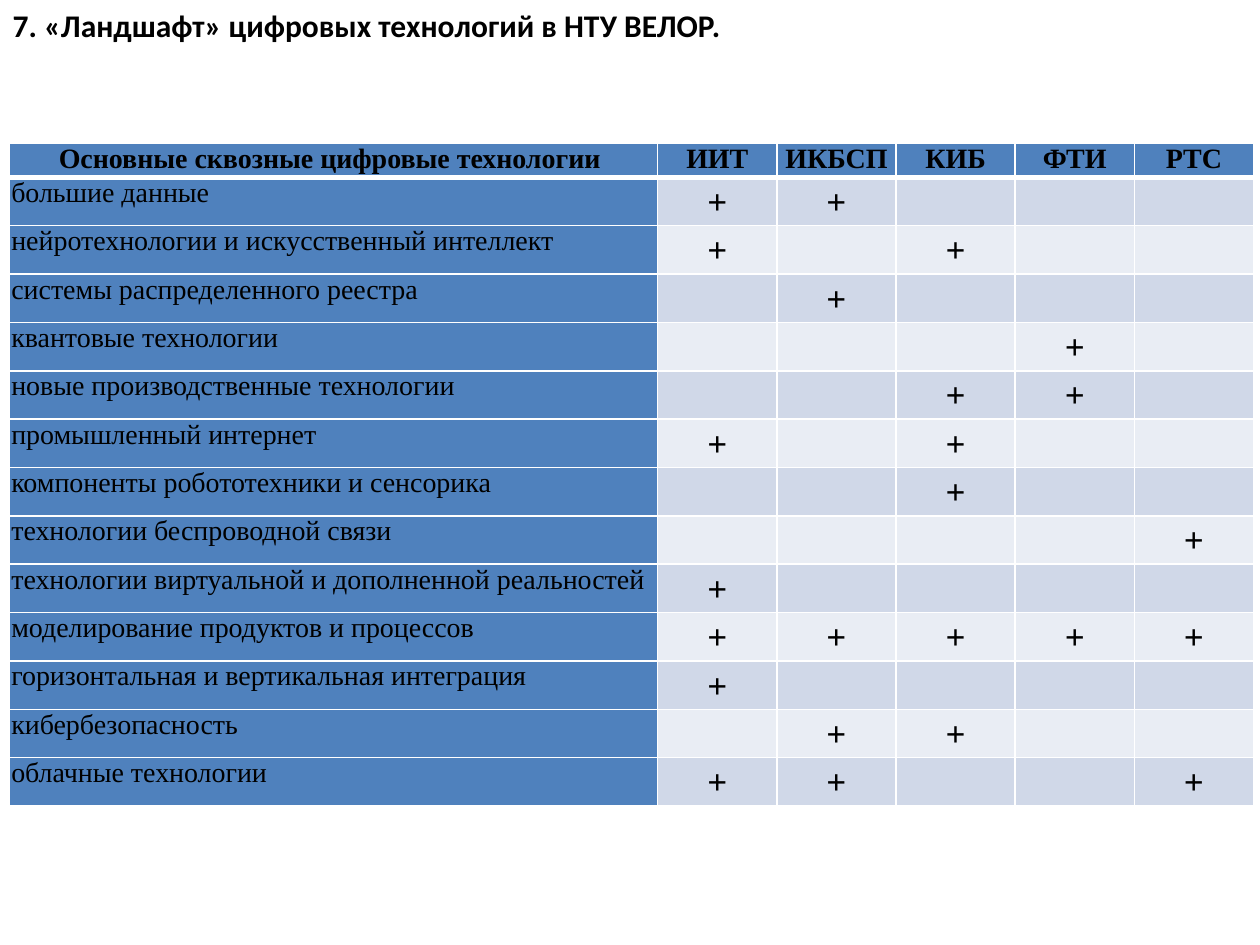
"""Build a slide with a table of digital technologies by institute."""
import pptx
import pptx.dml.color
import pptx.enum.text
import pptx.oxml.ns
import pptx.util
from lxml import etree

BLACK = pptx.dml.color.RGBColor(0x00, 0x00, 0x00)
WHITE = pptx.dml.color.RGBColor(0xFF, 0xFF, 0xFF)
BLUE = pptx.dml.color.RGBColor(0x4F, 0x81, 0xBD)
DARK_BAND = pptx.dml.color.RGBColor(0xD0, 0xD8, 0xE8)
LIGHT_BAND = pptx.dml.color.RGBColor(0xE9, 0xED, 0xF4)
Inches = pptx.util.Inches
ALIGN = pptx.enum.text.PP_ALIGN

INSTITUTES = ["ИИТ", "ИКБСП", "КИБ", "ФТИ", "РТС"]
TECHNOLOGIES = [
    ("большие данные", ["ИИТ", "ИКБСП"]),
    ("нейротехнологии и искусственный интеллект", ["ИИТ", "КИБ"]),
    ("системы распределенного реестра", ["ИКБСП"]),
    ("квантовые технологии", ["ФТИ"]),
    ("новые производственные технологии", ["КИБ", "ФТИ"]),
    ("промышленный интернет", ["ИИТ", "КИБ"]),
    ("компоненты робототехники и сенсорика", ["КИБ"]),
    ("технологии беспроводной связи", ["РТС"]),
    ("технологии виртуальной и дополненной реальностей", ["ИИТ"]),
    ("моделирование продуктов и процессов", INSTITUTES),
    ("горизонтальная и вертикальная интеграция", ["ИИТ"]),
    ("кибербезопасность", ["ИКБСП", "КИБ"]),
    ("облачные технологии", ["ИИТ", "ИКБСП", "РТС"]),
]
TABLE_WIDTH = 9.88
TABLE_HEIGHT = 5.25
NAME_WIDTH = 5.15
HEADER_HEIGHT = 0.26


def add_span(para, text, font_name, size, bold):
    span = para.add_run()
    span.text = text
    span.font.name = font_name
    span.font.size = pptx.util.Pt(size)
    span.font.bold = bold
    span.font.color.rgb = BLACK


def set_border(cell, side, width):
    properties = cell._tc.get_or_add_tcPr()
    line = etree.SubElement(properties, pptx.oxml.ns.qn("a:ln" + side), w=str(pptx.util.Pt(width)))
    fill = etree.SubElement(line, pptx.oxml.ns.qn("a:solidFill"))
    etree.SubElement(fill, pptx.oxml.ns.qn("a:srgbClr"), val=str(WHITE))


deck = pptx.Presentation()
deck.slide_width = Inches(10)
deck.slide_height = Inches(7.5)
page = deck.slides.add_slide(deck.slide_layouts[5])

title = page.shapes.title
title.left, title.top = Inches(0), Inches(0)
title.width, title.height = Inches(10), Inches(0.4)
title.text_frame.word_wrap = True
title.text_frame.auto_size = pptx.enum.text.MSO_AUTO_SIZE.SHAPE_TO_FIT_TEXT
title.text_frame.vertical_anchor = pptx.enum.text.MSO_ANCHOR.TOP
title_para = title.text_frame.paragraphs[0]
title_para.alignment = ALIGN.LEFT
add_span(title_para, "7. «Ландшафт» цифровых технологий в НТУ ВЕЛОР.", "Calibri", 18, True)

rows = [["Основные сквозные цифровые технологии "] + INSTITUTES]
for technology, users in TECHNOLOGIES:
    rows.append([technology] + ["+" if name in users else "" for name in INSTITUTES])

table = page.shapes.add_table(
    len(rows), len(rows[0]), Inches(0.07), Inches(1.14), Inches(TABLE_WIDTH), Inches(TABLE_HEIGHT)
).table
mark_width = (TABLE_WIDTH - NAME_WIDTH) / len(INSTITUTES)
for index, column in enumerate(table.columns):
    column.width = Inches(mark_width if index else NAME_WIDTH)
body_height = (TABLE_HEIGHT - HEADER_HEIGHT) / len(TECHNOLOGIES)
for index, row in enumerate(table.rows):
    row.height = Inches(body_height if index else HEADER_HEIGHT)

for row_index, texts in enumerate(rows):
    for column_index, text in enumerate(texts):
        is_header = row_index == 0
        is_mark = row_index > 0 and column_index > 0
        cell = table.cell(row_index, column_index)
        cell.margin_left = cell.margin_right = Inches(0.02)
        cell.margin_top = cell.margin_bottom = Inches(0)
        set_border(cell, "L", 1)
        set_border(cell, "R", 1)
        set_border(cell, "T", 3 if row_index == 1 else 1)
        set_border(cell, "B", 3 if is_header else 1)
        cell.fill.solid()
        band = DARK_BAND if row_index % 2 else LIGHT_BAND
        cell.fill.fore_color.rgb = band if is_mark else BLUE
        para = cell.text_frame.paragraphs[0]
        para.alignment = ALIGN.CENTER if is_header or is_mark else ALIGN.LEFT
        if is_mark:
            para.line_spacing = 1.15
        if text:
            add_span(para, text, "Times New Roman", 20 if is_mark else 16, is_header or is_mark)

deck.save("out.pptx")
